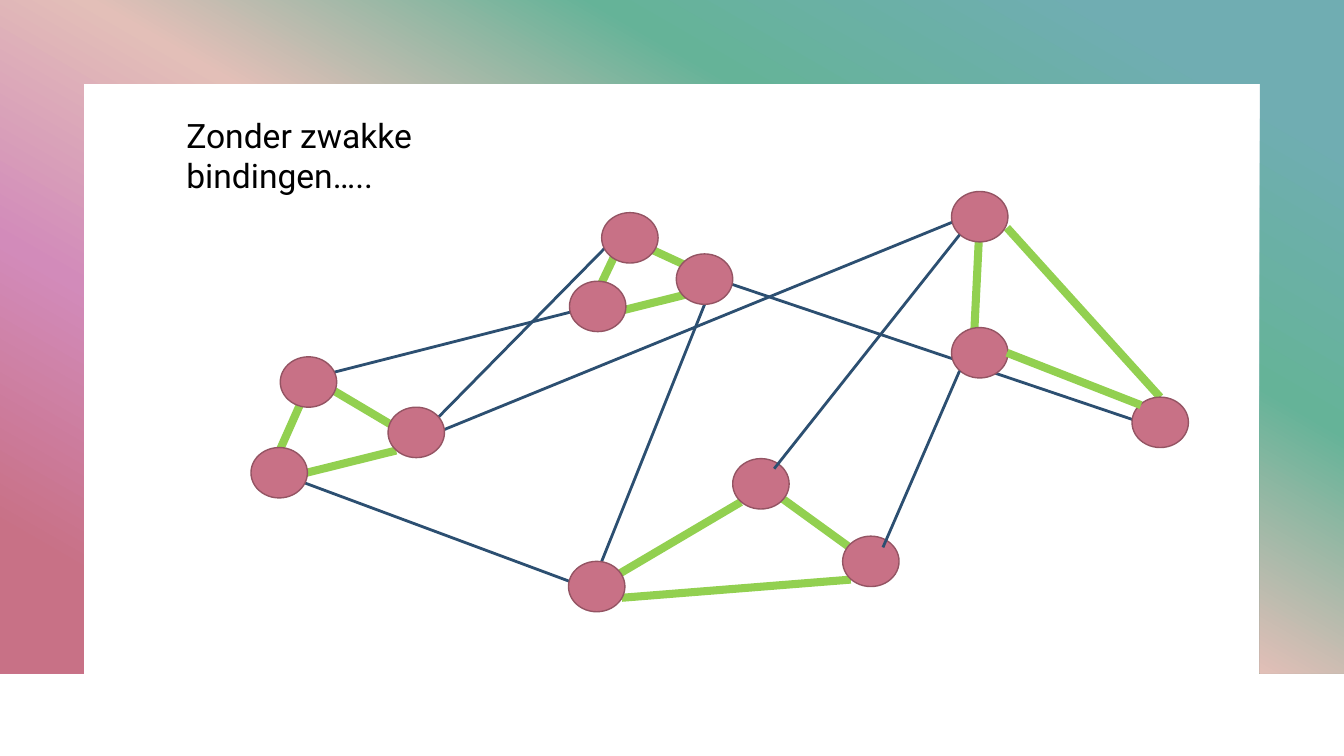
from dataclasses import dataclass

from lxml import etree
from pptx import Presentation
from pptx.dml.color import RGBColor
from pptx.enum.shapes import MSO_CONNECTOR, MSO_SHAPE
from pptx.enum.text import MSO_AUTO_SIZE
from pptx.oxml.ns import qn
from pptx.util import Pt

LINE = MSO_CONNECTOR.STRAIGHT
OVAL = MSO_SHAPE.OVAL
GROW = MSO_AUTO_SIZE.SHAPE_TO_FIT_TEXT


@dataclass(frozen=True)
class Theme:
    """Hold the colours, widths and type of the slide."""
    node: str = "C87186"
    rim: str = "945463"
    strong: tuple = ("92D050", 5.75)
    weak: tuple = ("2C4F71", 2)
    ink: str = "000000"
    font: str = "Roboto"
    size: float = 24
    blend: tuple = ((10, "70ADB2"), (30, "65B398"), (50, "E3BFB8"),
                    (70, "D28BBA"), (90, "C87186"))
    turn: float = 240


THEME = Theme()
NODE = (40.3, 36)
NODES = [
    (523.4, 327.6), (601.9, 383), (679.7, 234), (808.6, 283.7),
    (679.7, 136.8), (406.8, 200.9), (483.1, 181.4), (429.8, 151.9),
    (200.2, 254.9), (277.2, 290.9), (179.3, 319.7), (406.1, 401),
]
STRONG = [
    (424.8, 212.4, 447.1, 165.6), (237.6, 278.6, 280.1, 303.8),
    (218.9, 337.7, 283, 321.8), (199.4, 322.6, 218.9, 278.6),
    (694.8, 259.9, 699.1, 172.8), (453.6, 172.8, 511.2, 199.4),
    (719.3, 162.7, 828.7, 283.7), (441.4, 222.5, 505.4, 206.6),
    (444.2, 427, 607.7, 414), (441.4, 410.4, 529.2, 358.6),
    (630.7, 408.2, 544.3, 345.6),
]
WEAK = [
    (422.6, 419, 503.3, 217.4), (304.6, 306.7, 443.5, 165.6),
    (211, 272.9, 423.4, 218.9), (509.8, 198.7, 815, 301.7),
    (301.7, 313.2, 697, 151.9), (203.8, 339.8, 416.9, 419),
]
STRONG_TOP = [(719.3, 252, 815, 289.4)]
WEAK_TOP = [(553, 334.8, 685.4, 167.8), (630.7, 391, 685.4, 265)]


def style(item, attrs):
    """Set each named value on the item."""
    for name, value in attrs.items():
        setattr(item, name, value)


def paint(fill, tint):
    """Give the fill one solid colour."""
    fill.solid()
    fill.fore_color.rgb = RGBColor.from_string(tint)


def frame(slide, box, edge):
    """Draw the blended border, open at its foot."""
    x, y, w, h = box
    right, foot = x + w, y + h
    spots = [(right, y), (right, foot), (right - edge, foot),
             (right - edge, y + edge), (x + edge, y + edge),
             (x + edge, foot), (x, foot)]
    pen = slide.shapes.build_freeform(Pt(x), Pt(y))
    pen.add_line_segments([(Pt(a), Pt(b)) for a, b in spots], close=True)
    shape = pen.convert_to_shape()
    shape.shadow.inherit = False
    shape.line.fill.background()
    shape.fill.gradient()
    shape.fill.gradient_angle = THEME.turn
    stops = next(shape.element.iter(qn("a:gsLst")))
    for old in list(stops):
        stops.remove(old)
    for share, tint in THEME.blend:
        stop = etree.SubElement(stops, qn("a:gs"), pos=str(share * 1000))
        etree.SubElement(stop, qn("a:srgbClr"), val=tint)


def links(slide, box, ends, look):
    """Draw one kind of tie between people."""
    x, y = box[:2]
    tint, width = look
    for x1, y1, x2, y2 in ends:
        tie = slide.shapes.add_connector(
            LINE, Pt(x + x1), Pt(y + y1), Pt(x + x2), Pt(y + y2))
        paint(tie.line.fill, tint)
        tie.line.width = Pt(width)
        etree.SubElement(tie.element.spPr, qn("a:effectLst"))


def nodes(slide, box):
    """Draw the people as ovals."""
    x, y = box[:2]
    w, h = NODE
    for left, top in NODES:
        dot = slide.shapes.add_shape(
            OVAL, Pt(x + left), Pt(y + top), Pt(w), Pt(h))
        dot.shadow.inherit = False
        paint(dot.fill, THEME.node)
        paint(dot.line.fill, THEME.rim)
        dot.line.width = Pt(1)


def network(slide, box):
    """Stack the ties and the people."""
    links(slide, box, STRONG, THEME.strong)
    links(slide, box, WEAK, THEME.weak)
    nodes(slide, box)
    links(slide, box, STRONG_TOP, THEME.strong)
    links(slide, box, WEAK_TOP, THEME.weak)


def title(slide, box, words):
    """Write the heading in its box."""
    text = slide.shapes.add_textbox(*map(Pt, box)).text_frame
    style(text, {"word_wrap": True, "auto_size": GROW})
    run = text.paragraphs[0].add_run()
    run.text = words
    style(run.font, {"name": THEME.font, "size": Pt(THEME.size)})
    run.font.color.rgb = RGBColor.from_string(THEME.ink)


def main():
    """Build and save the slide."""
    deck = Presentation()
    style(deck, {"slide_width": Pt(960), "slide_height": Pt(540)})
    slide = deck.slides.add_slide(deck.slide_layouts[6])
    frame(slide, (0, 0, 960, 481), 60)
    network(slide, (0, 0, 960, 540))
    title(slide, (126, 78.5, 257.8, 65.5), "Zonder zwakke bindingen…..")
    deck.save("out.pptx")


if __name__ == "__main__":
    main()
